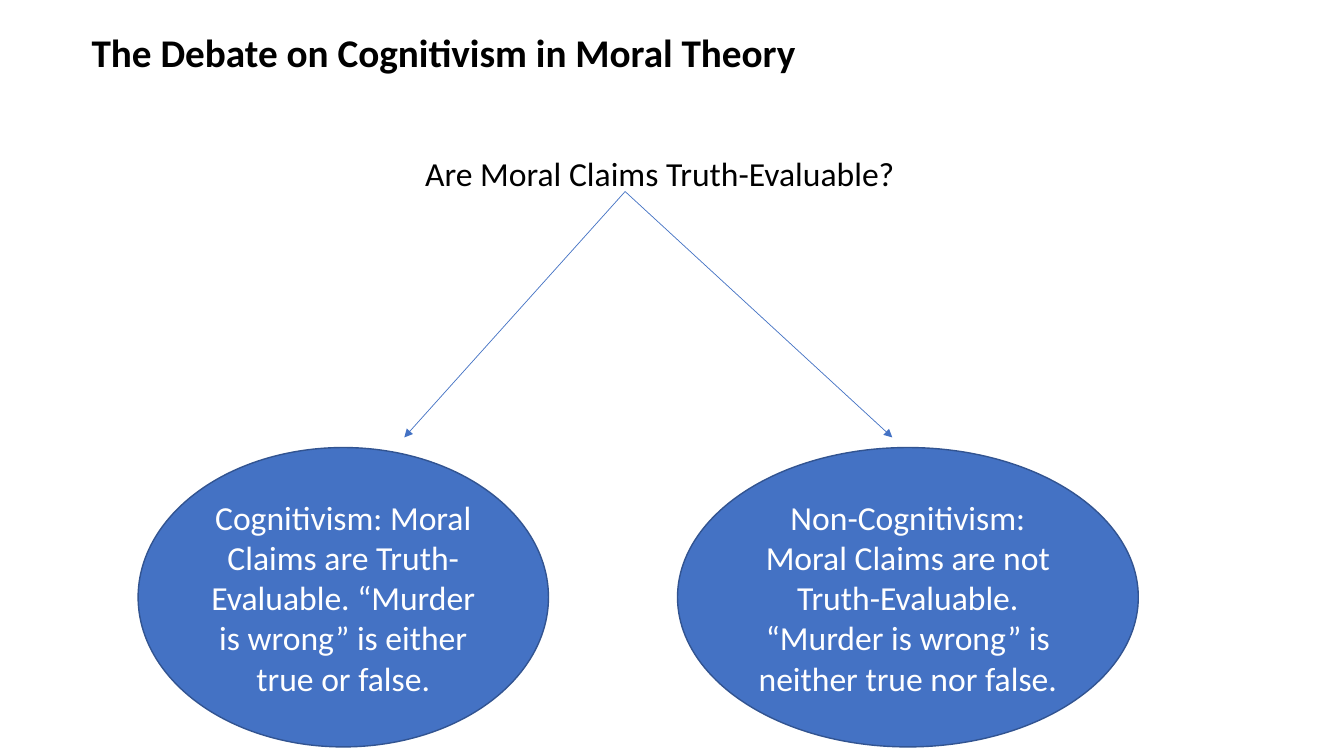
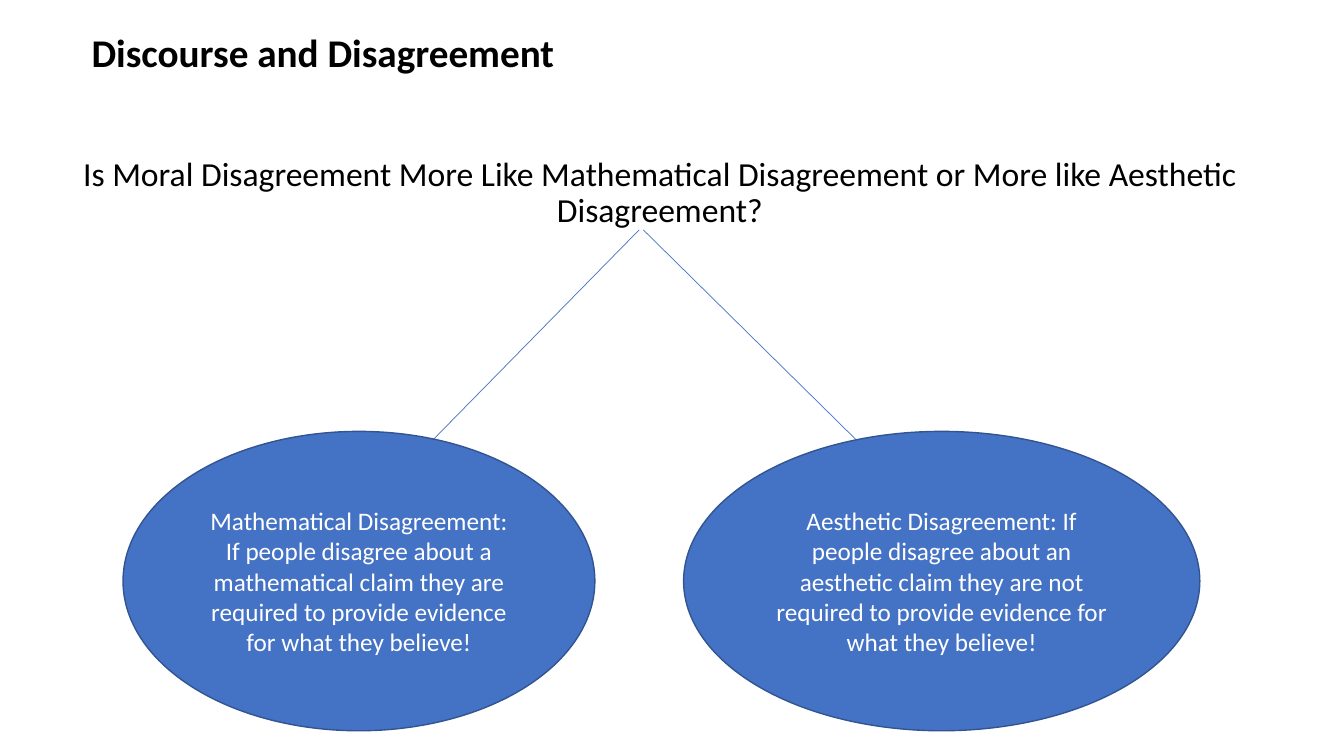
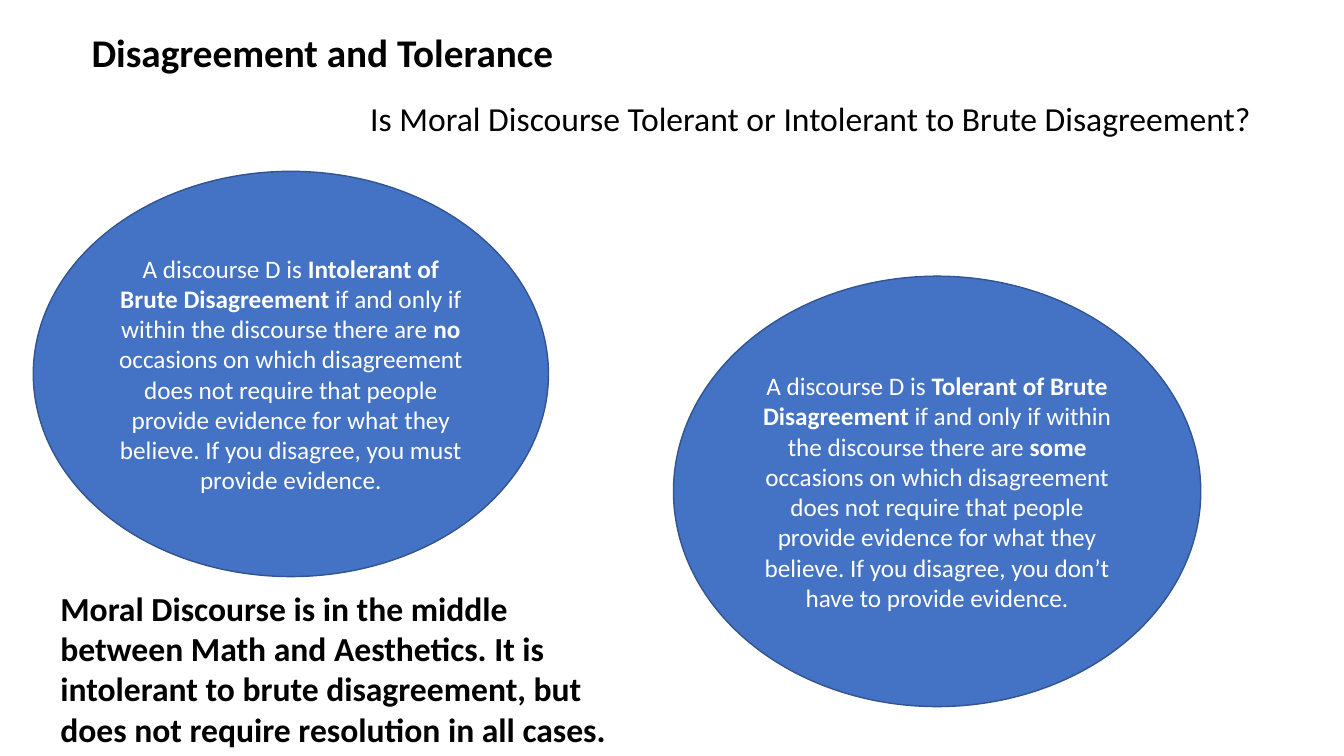
import lxml.etree
import pptx
import pptx.dml.color
import pptx.enum.shapes
import pptx.enum.text
import pptx.oxml.ns
import pptx.util

Inches = pptx.util.Inches
Align = pptx.enum.text.PP_ALIGN
Anchor = pptx.enum.text.MSO_ANCHOR

THEME = {
    "font": "Calibri",
    "text": "000000",
    "inverse": "FFFFFF",
    "fill": "4472C4",
    "outline": "325491",
    "title_size": 28,
    "large": 24,
    "small": 18,
    "outline_width": 1,
    "arrow_width": 0.5,
}
TITLE_BOX = (0.81, 0.11, 11.95, 0.86)

# Boxes are left, top, width, height in inches.
# In a list of text pieces, every second piece is bold.
SLIDES = [
    {
        "title": "The Debate on Cognitivism in Moral Theory",
        "question": "Are Moral Claims Truth-Evaluable?",
        "question_box": (0.33, 1.51, 12.43, 0.9),
        "answer_size": "large",
        "answers": [
            {
                "box": (1.37, 4.44, 4.07, 2.97),
                "arrow": ((6.2, 1.9), (4.01, 4.34)),
                "pieces": ["Cognitivism: Moral Claims are Truth-Evaluable. "
                           "“Murder is wrong” is either true or false."],
            },
            {
                "box": (6.72, 4.44, 4.57, 2.97),
                "arrow": ((6.2, 1.9), (8.85, 4.34)),
                "pieces": ["Non-Cognitivism: Moral Claims are not Truth-Evaluable. "
                           "“Murder is wrong” is neither true nor false."],
            },
        ],
    },
    {
        "title": "Discourse and Disagreement",
        "question": "Is Moral Disagreement More Like Mathematical Disagreement "
                    "or More like Aesthetic Disagreement?",
        "question_box": (0.33, 1.51, 12.43, 0.9),
        "answer_size": "small",
        "answers": [
            {
                "box": (1.22, 4.28, 4.68, 2.97),
                "arrow": ((6.34, 2.28), (4.2, 4.46)),
                "pieces": ["Mathematical Disagreement: If people disagree about a "
                           "mathematical claim they are required to provide evidence "
                           "for what they believe!"],
            },
            {
                "box": (6.78, 4.28, 5.12, 2.97),
                "arrow": ((6.38, 2.28), (8.59, 4.46)),
                "pieces": ["Aesthetic Disagreement: If people disagree about an "
                           "aesthetic claim they are not required to provide evidence "
                           "for what they believe!"],
            },
        ],
    },
    {
        "title": "Disagreement and Tolerance",
        "question": "Is Moral Discourse Tolerant or Intolerant to Brute Disagreement?",
        "question_box": (3.32, 0.97, 9.44, 0.6),
        "answer_size": "small",
        "answers": [
            {
                "box": (0.33, 1.7, 5.11, 4.02),
                "pieces": [
                    "A discourse D is ",
                    "Intolerant of Brute Disagreement",
                    " if and only if within the discourse there are ",
                    "no",
                    " occasions on which disagreement does not require that people "
                    "provide evidence for what they believe. If you disagree, you "
                    "must provide evidence.",
                ],
            },
            {
                "box": (6.68, 2.74, 5.23, 4.27),
                "pieces": [
                    "A discourse D is ",
                    "Tolerant of Brute Disagreement",
                    " if and only if within the discourse there are ",
                    "some",
                    " occasions on which disagreement does not require that people "
                    "provide evidence for what they believe. If you disagree, you "
                    "don’t have to provide evidence.",
                ],
            },
        ],
        "conclusion": "Moral Discourse is in the middle between Math and Aesthetics. "
                      "It is intolerant to brute disagreement, but does not require "
                      "resolution in all cases.",
        "conclusion_box": (0.5, 5.78, 5.75, 1.72),
    },
]


def color(name):
    return pptx.dml.color.RGBColor.from_string(THEME[name])


def set_format(target, values):
    for name, value in values.items():
        setattr(target, name, value)


def write(shape, pieces, size, text_color="text", bold=False, anchor=Anchor.TOP,
          **paragraph_format):
    """Fill a shape with one paragraph; every second piece is bold."""
    set_format(shape.text_frame, {"word_wrap": True, "vertical_anchor": anchor})
    paragraph = shape.text_frame.paragraphs[0]
    set_format(paragraph, paragraph_format)
    for index, piece in enumerate(pieces):
        run = paragraph.add_run()
        run.text = piece
        set_format(run.font, {
            "name": THEME["font"],
            "size": pptx.util.Pt(THEME[size]),
            "bold": bold or index % 2 == 1,
        })
        run.font.color.rgb = color(text_color)


def add_text(slide, box, text, size, **text_format):
    shape = slide.shapes.add_textbox(*map(Inches, box))
    write(shape, [text], size, **text_format)


def set_line(line, color_name, width_name):
    line.color.rgb = color(color_name)
    line.width = pptx.util.Pt(THEME[width_name])


def add_arrow(slide, start, end):
    connector = slide.shapes.add_connector(
        pptx.enum.shapes.MSO_CONNECTOR.STRAIGHT, *map(Inches, start + end))
    set_line(connector.line, "fill", "arrow_width")
    qn = pptx.oxml.ns.qn
    properties = connector._element.spPr
    lxml.etree.SubElement(properties.find(qn("a:ln")), qn("a:tailEnd"), type="triangle")
    lxml.etree.SubElement(properties, qn("a:effectLst"))


def add_answer(slide, answer, size):
    if "arrow" in answer:
        add_arrow(slide, *answer["arrow"])
    ellipse = slide.shapes.add_shape(
        pptx.enum.shapes.MSO_SHAPE.OVAL, *map(Inches, answer["box"]))
    ellipse.shadow.inherit = False
    ellipse.fill.solid()
    ellipse.fill.fore_color.rgb = color("fill")
    set_line(ellipse.line, "outline", "outline_width")
    write(ellipse, answer["pieces"], size, text_color="inverse",
          anchor=Anchor.MIDDLE, alignment=Align.CENTER)


def add_slide(presentation, content):
    slide = presentation.slides.add_slide(presentation.slide_layouts[6])
    add_text(slide, TITLE_BOX, content["title"], "title_size", bold=True,
             anchor=Anchor.MIDDLE, line_spacing=0.9)
    add_text(slide, content["question_box"], content["question"], "large",
             alignment=Align.CENTER, line_spacing=0.9)
    for answer in content["answers"]:
        add_answer(slide, answer, content["answer_size"])
    if "conclusion" in content:
        add_text(slide, content["conclusion_box"], content["conclusion"], "large",
                 bold=True)


def main():
    presentation = pptx.Presentation()
    set_format(presentation, {"slide_width": Inches(13.33), "slide_height": Inches(7.5)})
    for content in SLIDES:
        add_slide(presentation, content)
    presentation.save("out.pptx")


if __name__ == "__main__":
    main()
